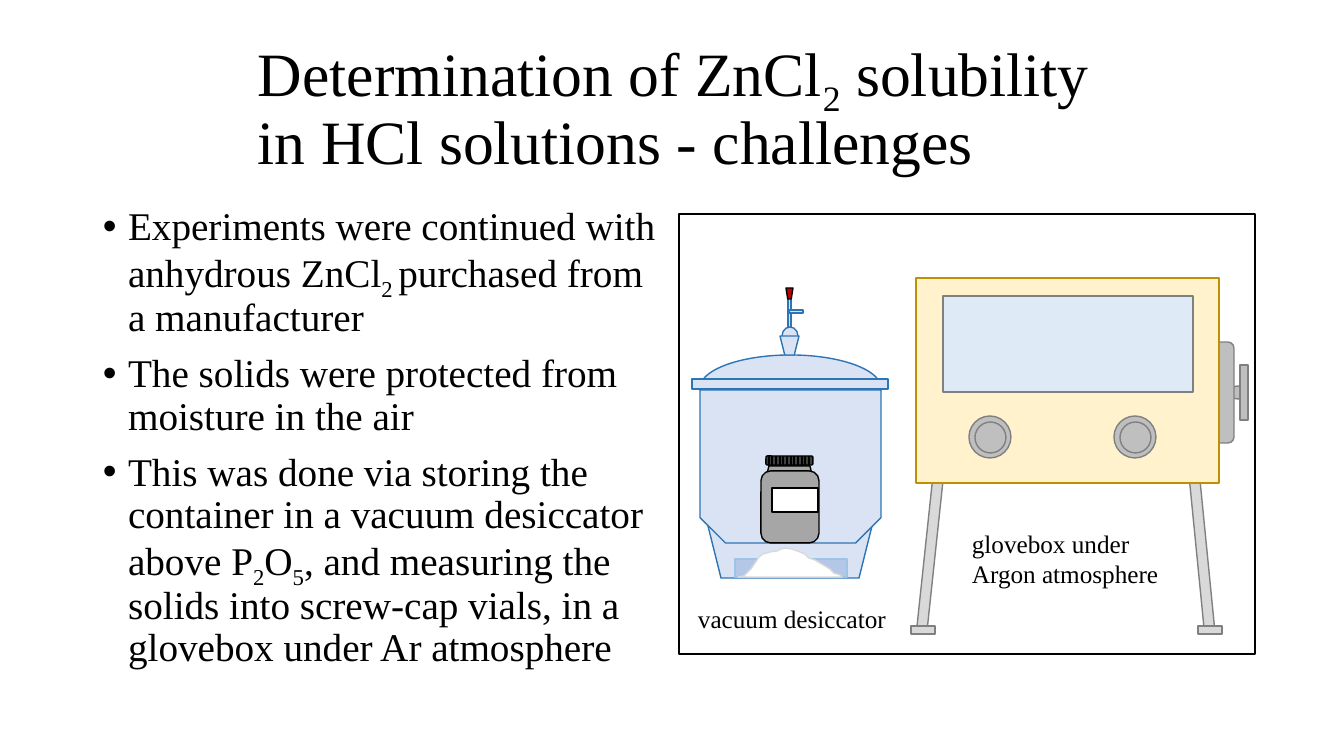
from dataclasses import dataclass
from typing import Any

from lxml import etree
from pptx import Presentation
from pptx import util as u
from pptx.dml.color import RGBColor
from pptx.enum import shapes, text
from pptx.oxml.ns import qn

SCALE = 914400 / 100.8
KIND = shapes.MSO_SHAPE


@dataclass(frozen=True)
class Theme:
    font: str = "Times New Roman"
    title: int = 44
    body: int = 28
    label: int = 18
    stroke: int = 1
    ink: str = "000000"
    white: str = "FFFFFF"
    glass: str = "DAE3F3"
    blue: str = "2E75B6"
    red: str = "C00000"
    jar: str = "A6A6A6"
    lid: str = "404040"
    tray: str = "B4C7E7"
    sky: str = "9DC3E6"
    metal: str = "BFBFBF"
    pale: str = "D9D9D9"
    edge: str = "808080"
    cream: str = "FFF2CC"
    gold: str = "BF9000"
    pane: str = "DEEBF7"


THEME = Theme()


@dataclass(frozen=True)
class Part:
    kind: Any
    left: int
    top: int
    width: int
    height: int
    fill: str
    line: str
    turn: float = 0


@dataclass(frozen=True)
class Block:
    left: int
    top: int
    width: int
    height: int
    size: int
    lines: tuple[str, ...]
    space: float = 1.0
    gap: int = 0
    bullet: bool = False
    middle: bool = False
    grow: bool = False


def px(count: float) -> u.Emu:
    return u.Emu(round(count * SCALE))


def paint(shape: Any, fill: str, line: str) -> None:
    shape.shadow.inherit = False
    shape.fill.solid()
    shape.fill.fore_color.rgb = RGBColor.from_string(fill)
    shape.line.color.rgb = RGBColor.from_string(line)
    shape.line.width = u.Pt(THEME.stroke)


def draw_part(tree: Any, part: Part) -> None:
    shape = tree.add_shape(
        part.kind, px(part.left), px(part.top), px(part.width), px(part.height)
    )
    shape.rotation = part.turn
    paint(shape, part.fill, part.line)


def draw_ridge(tree: Any, left: int, top: int, end: int) -> None:
    ridge = tree.add_connector(
        shapes.MSO_CONNECTOR.STRAIGHT, px(left), px(top), px(left), px(end)
    )
    ridge.line.color.rgb = RGBColor.from_string(THEME.ink)
    ridge.line.width = u.Pt(THEME.stroke)
    etree.SubElement(ridge._element.spPr, qn("a:effectLst"))


def draw_heap(tree: Any, points: list[tuple[int, int]]) -> None:
    pen = tree.build_freeform(*points[0], scale=SCALE)
    pen.add_line_segments(points[1:], close=True)
    paint(pen.convert_to_shape(), THEME.white, THEME.pale)


def add_bullet(para: Any) -> None:
    props = para._p.get_or_add_pPr()
    props.set("marL", str(u.Inches(0.25)))
    props.set("indent", str(-u.Inches(0.25)))
    etree.SubElement(props, qn("a:buFont")).set("typeface", "Arial")
    etree.SubElement(props, qn("a:buChar")).set("char", "•")


def draw_block(tree: Any, block: Block) -> None:
    box = tree.add_textbox(
        px(block.left), px(block.top), px(block.width), px(block.height)
    )
    frame = box.text_frame
    frame.word_wrap = True
    if block.middle:
        frame.vertical_anchor = text.MSO_ANCHOR.MIDDLE
    if block.grow:
        frame.auto_size = text.MSO_AUTO_SIZE.SHAPE_TO_FIT_TEXT
    for row, line in enumerate(block.lines):
        para = frame.add_paragraph() if row else frame.paragraphs[0]
        if block.bullet:
            add_bullet(para)
        para.line_spacing = block.space
        para.space_before = u.Pt(block.gap if row else 0)
        for spot, piece in enumerate(line.split("|")):
            run = para.add_run()
            run.text = piece
            run.font.name = THEME.font
            run.font.size = u.Pt(block.size)
            run.font.color.rgb = RGBColor.from_string(THEME.ink)
            if spot % 2:
                run._r.get_or_add_rPr().set("baseline", "-25000")


def glass(kind: Any, left: int, top: int, width: int, height: int,
          turn: float = 0) -> Part:
    return Part(kind, left, top, width, height, THEME.glass, THEME.blue, turn)


def metal(kind: Any, left: int, top: int, width: int, height: int) -> Part:
    return Part(kind, left, top, width, height, THEME.metal, THEME.edge)


def leg(left: int, turn: float, foot: int) -> list[Part]:
    return [
        Part(KIND.PARALLELOGRAM, left, 474, 14, 159, THEME.pale, THEME.edge, turn),
        Part(KIND.RECTANGLE, foot, 626, 24, 8, THEME.pale, THEME.edge),
    ]


def port(left: int) -> list[Part]:
    return [metal(KIND.OVAL, left, 416, 42, 42),
            metal(KIND.OVAL, left + 6, 422, 31, 31)]


FRAME = Part(KIND.FLOWCHART_PROCESS, 679, 214, 576, 440, THEME.white, THEME.ink)
VESSEL = [
    glass(KIND.RECTANGLE, 788, 297, 3, 39),
    glass(KIND.OVAL, 782, 327, 16, 18),
    glass(KIND.TRAPEZOID, 708, 526, 164, 52, 180),
    glass(KIND.OVAL, 700, 355, 181, 66),
    glass(KIND.SNIP_2_SAME_RECTANGLE, 700, 390, 181, 153, 180),
    glass(KIND.RECTANGLE, 692, 379, 196, 10),
    glass(KIND.TRAPEZOID, 780, 336, 19, 19, 180),
    glass(KIND.RECTANGLE, 789, 310, 14, 3),
    Part(KIND.TRAPEZOID, 786, 288, 7, 11, THEME.red, THEME.ink, 180),
    Part(KIND.TRAPEZOID, 766, 466, 47, 12, THEME.jar, THEME.ink),
    Part(KIND.ROUNDED_RECTANGLE, 761, 471, 58, 72, THEME.jar, THEME.ink),
    Part(KIND.ROUNDED_RECTANGLE, 766, 456, 47, 9, THEME.lid, THEME.ink),
    Part(KIND.RECTANGLE, 772, 488, 46, 24, THEME.white, THEME.ink),
    Part(KIND.RECTANGLE, 735, 559, 112, 18, THEME.tray, THEME.sky),
]
HEAP = [
    (738, 577), (744, 576), (751, 569), (759, 557), (763, 554), (770, 552),
    (777, 551), (781, 549), (785, 548), (792, 549), (800, 552), (805, 554),
    (809, 558), (815, 560), (820, 563), (825, 566), (830, 569), (834, 573),
    (840, 575), (842, 577),
]
GLOVEBOX = [
    metal(KIND.OVAL, 1228, 386, 20, 13),
    metal(KIND.RECTANGLE, 1240, 365, 8, 55),
    metal(KIND.ROUNDED_RECTANGLE, 1198, 342, 36, 101),
    *leg(923, 4.8, 911),
    *leg(1195, 173.1, 1198),
    Part(KIND.RECTANGLE, 916, 278, 303, 205, THEME.cream, THEME.gold),
    Part(KIND.RECTANGLE, 943, 296, 250, 96, THEME.pane, THEME.edge),
    *port(969),
    *port(1114),
]
BLOCKS = [
    Block(93, 202, 587, 480, THEME.body, (
        "Experiments were continued with anhydrous ZnCl|2 |purchased from a manufacturer",
        "The solids were protected from moisture in the air",
        "This was done via storing the container in a vacuum desiccator above P|2|O|5|, "
        "and measuring the solids into screw-cap vials, in a glovebox under Ar atmosphere",
    ), space=0.9, gap=10, bullet=True),
    Block(248, 34, 857, 146, THEME.title, (
        "Determination of ZnCl|2| solubility in HCl solutions - challenges",
    ), space=0.9, middle=True),
    Block(688, 598, 213, 40, THEME.label, ("vacuum desiccator",), grow=True),
    Block(962, 523, 213, 72, THEME.label,
          ("glovebox under Argon atmosphere",), grow=True),
]


def main() -> None:
    deck = Presentation()
    deck.slide_width, deck.slide_height = px(1344), px(756)
    slide = deck.slides.add_slide(deck.slide_layouts[6])
    draw_part(slide.shapes, FRAME)
    vessel = slide.shapes.add_group_shape().shapes
    for part in VESSEL:
        draw_part(vessel, part)
    for step in range(12):
        draw_ridge(vessel, 769 + step * 11 // 3, 456, 466)
    draw_heap(vessel, HEAP)
    glovebox = slide.shapes.add_group_shape().shapes
    for part in GLOVEBOX:
        draw_part(glovebox, part)
    for block in BLOCKS:
        draw_block(slide.shapes, block)
    deck.save("out.pptx")


if __name__ == "__main__":
    main()
